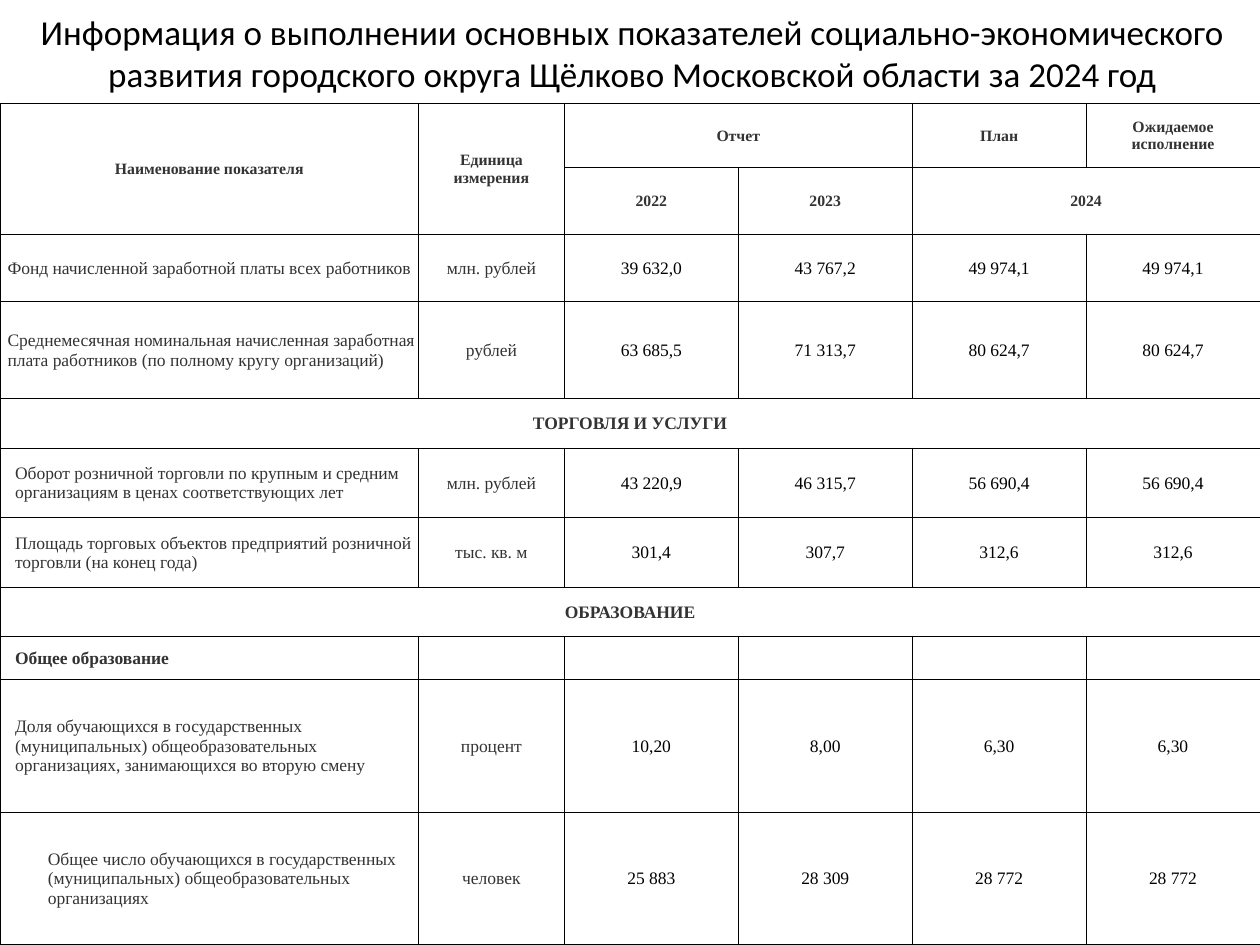
from lxml import etree
from pptx import Presentation
from pptx.dml.color import RGBColor
from pptx.enum.text import MSO_ANCHOR, PP_ALIGN
from pptx.oxml.ns import qn
from pptx.util import Inches, Pt

LEFT, CENTER = PP_ALIGN.LEFT, PP_ALIGN.CENTER
MIDDLE = MSO_ANCHOR.MIDDLE
BLACK = RGBColor(0, 0, 0)
GRAY = RGBColor(0x33, 0x33, 0x33)
WHITE = RGBColor(0xFF, 0xFF, 0xFF)
TITLE_FONT, TABLE_FONT = "Calibri", "Times New Roman"

W, H = Inches(10), Inches(7.5)
TITLE_BOX = (0.004 * W, 0.005 * H, 0.996 * W, 0.1 * H)
TABLE_BOX = (0, 0.109 * H, W, 0.891 * H)
COLS = [3.32, 1.16] + [1.38] * 4
ROWS = [0.51, 0.53, 0.53, 0.77, 0.39, 0.55, 0.55, 0.39, 0.34, 1.05, 1.05]
PAD = 0.01

TITLE = ("Информация о выполнении основных показателей социально-экономического "
         "развития городского округа Щёлково Московской области за 2024 год")
HEADER = [
    (0, 0, 2, 1, "Наименование показателя"),
    (0, 1, 2, 1, "Единица\nизмерения"),
    (0, 2, 1, 2, "Отчет"),
    (0, 4, 1, 1, "План"),
    (0, 5, 1, 1, "Ожидаемое\nисполнение"),
    (1, 2, 1, 1, "2022"),
    (1, 3, 1, 1, "2023"),
    (1, 4, 1, 2, "2024"),
]
INDICATORS = [
    (2, 0.06, "Фонд начисленной заработной платы всех работников",
     "млн. рублей", "39 632,0", "43 767,2", "49 974,1", "49 974,1"),
    (3, 0.06, "Среднемесячная номинальная начисленная заработная плата "
     "работников (по полному кругу организаций)",
     "рублей", "63 685,5", "71 313,7", "80 624,7", "80 624,7"),
    (5, 0.12, "Оборот розничной торговли по крупным и средним организациям "
     "в ценах соответствующих лет",
     "млн. рублей", "43 220,9", "46 315,7", "56 690,4", "56 690,4"),
    (6, 0.12, "Площадь торговых объектов предприятий розничной торговли "
     "(на конец года)",
     "тыс. кв. м", "301,4", "307,7", "312,6", "312,6"),
    (9, 0.12, "Доля обучающихся в государственных (муниципальных) "
     "общеобразовательных организациях, занимающихся во вторую смену",
     "процент", "10,20", "8,00", "6,30", "6,30"),
    (10, 0.38, "Общее число обучающихся в государственных (муниципальных) "
     "общеобразовательных организациях",
     "человек", "25 883", "28 309", "28 772", "28 772"),
]
SECTIONS = [(4, "ТОРГОВЛЯ И УСЛУГИ"), (7, "ОБРАЗОВАНИЕ")]
SUBSECTION = (8, "Общее образование")


def style_paragraph(p, font, size, color, bold=False, align=CENTER):
    """Set the alignment and font of a paragraph."""
    p.alignment = align
    p.font.name = font
    p.font.size = Pt(size)
    p.font.bold = bold
    p.font.color.rgb = color


def frame_cell(cell):
    """Give a cell thin black borders, a white fill and tight margins."""
    tc_pr = cell._tc.get_or_add_tcPr()
    for side in ("a:lnL", "a:lnR", "a:lnT", "a:lnB"):
        ln = etree.SubElement(tc_pr, qn(side), w=str(Pt(0.5)))
        fill = etree.SubElement(ln, qn("a:solidFill"))
        etree.SubElement(fill, qn("a:srgbClr"), val=str(BLACK))
    cell.fill.solid()
    cell.fill.fore_color.rgb = WHITE
    cell.vertical_anchor = MIDDLE
    cell.margin_left = cell.margin_right = cell.margin_top = Inches(PAD)
    cell.margin_bottom = 0


def write_cell(cell, text, size=10, color=GRAY, bold=False, align=CENTER, indent=PAD):
    """Fill a cell with styled text, one paragraph for each line."""
    cell.margin_left = Inches(indent)
    cell.text = text
    for p in cell.text_frame.paragraphs:
        style_paragraph(p, TABLE_FONT, size, color, bold, align)


def add_title(slide, box):
    """Place the slide title in the box."""
    tf = slide.shapes.add_textbox(*map(round, box)).text_frame
    tf.word_wrap = True
    p = tf.paragraphs[0]
    p.text = TITLE
    style_paragraph(p, TITLE_FONT, 20, BLACK)


def add_indicators(slide, box):
    """Place the table of indicators in the box."""
    x, y, w, h = map(round, box)
    table = slide.shapes.add_table(len(ROWS), len(COLS), x, y, w, h).table
    table.first_row = table.horz_banding = False
    for col, share in zip(table.columns, COLS):
        col.width = round(w * share / sum(COLS))
    for row, share in zip(table.rows, ROWS):
        row.height = round(h * share / sum(ROWS))
    for cell in table.iter_cells():
        frame_cell(cell)

    for r, c, rows, cols, text in HEADER:
        cell = table.cell(r, c)
        if rows * cols > 1:
            cell.merge(table.cell(r + rows - 1, c + cols - 1))
        write_cell(cell, text, size=9, bold=True)
    for r, text in SECTIONS:
        table.cell(r, 0).merge(table.cell(r, len(COLS) - 1))
        write_cell(table.cell(r, 0), text, bold=True)
    r, text = SUBSECTION
    write_cell(table.cell(r, 0), text, bold=True, align=LEFT, indent=0.12)
    for r, indent, name, unit, *values in INDICATORS:
        write_cell(table.cell(r, 0), name, align=LEFT, indent=indent)
        write_cell(table.cell(r, 1), unit)
        for c, value in enumerate(values, 2):
            write_cell(table.cell(r, c), value, color=BLACK)


def main():
    """Build the slide and save it."""
    prs = Presentation()
    prs.slide_width, prs.slide_height = W, H
    slide = prs.slides.add_slide(prs.slide_layouts[6])
    add_title(slide, TITLE_BOX)
    add_indicators(slide, TABLE_BOX)
    prs.save("out.pptx")


if __name__ == "__main__":
    main()
